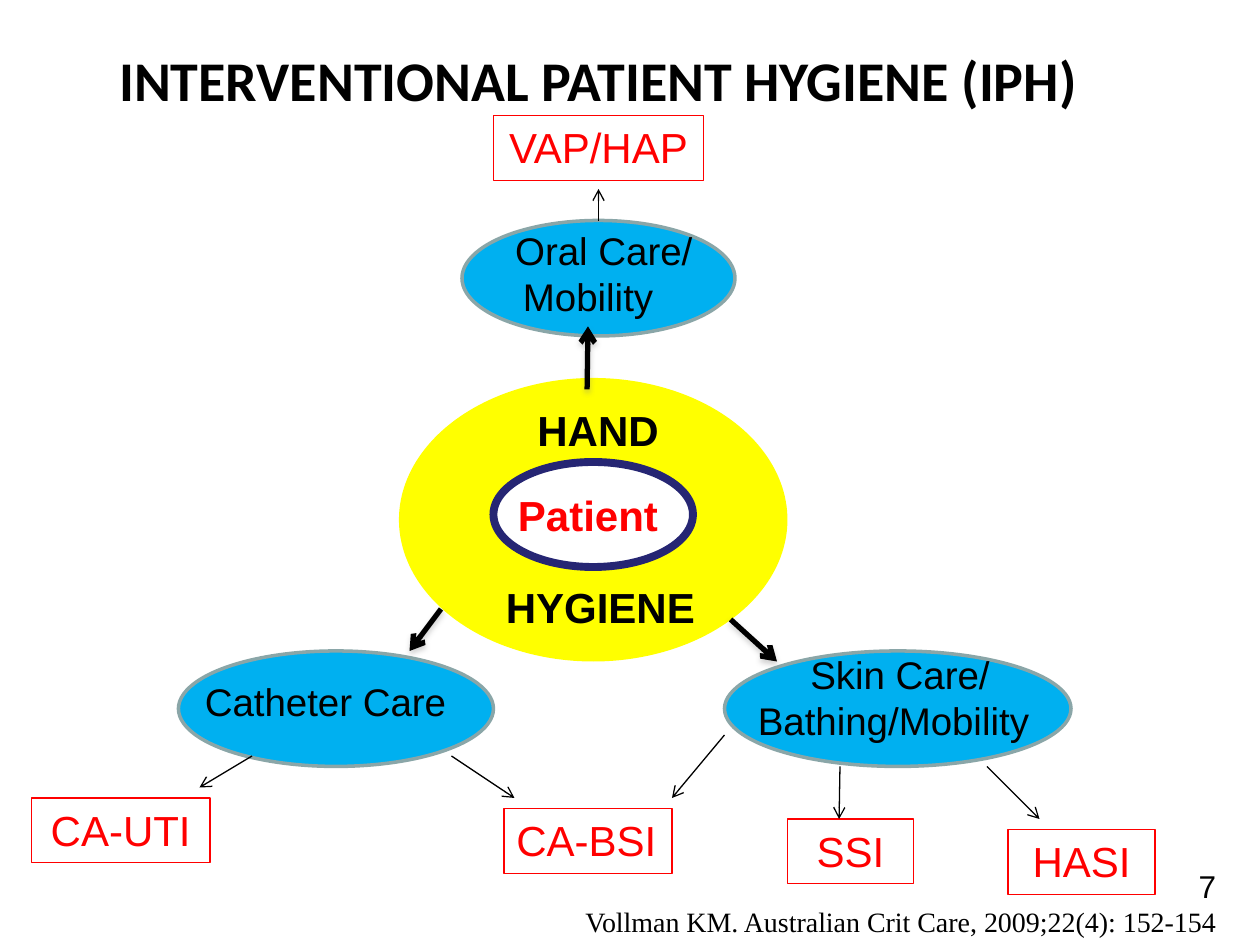
from lxml import etree
from pptx import Presentation
from pptx.dml.color import RGBColor
from pptx.enum.shapes import MSO_CONNECTOR, MSO_SHAPE
from pptx.enum.text import MSO_ANCHOR, PP_ALIGN
from pptx.oxml.ns import qn
from pptx.util import Pt

BLACK, RED, WHITE = "000000", "FF0000", "FFFFFF"
BLUE, YELLOW, NAVY, GREY = "00B0F0", "FFFF00", "262673", "8AA6A8"
LEFT, CENTER, RIGHT = PP_ALIGN.LEFT, PP_ALIGN.CENTER, PP_ALIGN.RIGHT


def rgb(color):
    return RGBColor.from_string(color)


def add_oval(s, box, fill, line=None, width=2):
    sp = s.shapes.add_shape(MSO_SHAPE.OVAL, *map(Pt, box))
    sp.shadow.inherit = False
    sp.fill.solid()
    sp.fill.fore_color.rgb = rgb(fill)
    if line:
        sp.line.color.rgb = rgb(line)
        sp.line.width = Pt(width)
    else:
        sp.line.fill.background()


def add_label(s, box, text, size=22, color=BLACK, bold=False, align=CENTER,
              font="Arial", indent=0, wrap=True):
    """Add a text box; indent moves its first line only."""
    sp = s.shapes.add_textbox(*map(Pt, box))
    tf = sp.text_frame
    tf.word_wrap = wrap
    p = tf.paragraphs[0]
    p.text = text
    p.alignment = align
    if indent:
        pPr = p._p.get_or_add_pPr()
        pPr.set("marL", "0")
        pPr.set("indent", str(Pt(indent)))
    p.font.name = font
    p.font.size = Pt(size)
    p.font.bold = bold
    p.font.color.rgb = rgb(color)
    return sp


def add_infection(s, box, text, fill=WHITE, align=CENTER):
    """Add a red-framed label naming an infection."""
    sp = add_label(s, box, text, 24, RED, align=align)
    if fill:
        sp.fill.solid()
        sp.fill.fore_color.rgb = rgb(fill)
    sp.line.color.rgb = rgb(RED)
    sp.line.width = Pt(0.75)


def add_arrow(s, start, end, width=0.75, shadow=False):
    c = s.shapes.add_connector(MSO_CONNECTOR.STRAIGHT, *map(Pt, start + end))
    c.line.color.rgb = rgb(BLACK)
    c.line.width = Pt(width)
    etree.SubElement(c.line._get_or_add_ln(), qn("a:tailEnd"), type="arrow")
    effects = etree.SubElement(c._element.spPr, qn("a:effectLst"))
    if shadow:
        outer = etree.SubElement(effects, qn("a:outerShdw"), blurRad=str(Pt(3.1)),
                                 dist=str(Pt(1.8)), dir="5400000", rotWithShape="0")
        color = etree.SubElement(outer, qn("a:srgbClr"), val="808080")
        etree.SubElement(color, qn("a:alpha"), val="35000")


def main():
    prs = Presentation()
    prs.slide_width, prs.slide_height = Pt(720), Pt(540)
    s = prs.slides.add_slide(prs.slide_layouts[6])

    title = add_label(s, (0, 0, 684, 90), "INTERVENTIONAL PATIENT HYGIENE (IPH)",
                      32, bold=True, font="Calibri")
    title.text_frame.vertical_anchor = MSO_ANCHOR.MIDDLE

    for left, top, width in ((264, 126, 156), (102, 372, 180), (414, 372, 198)):
        add_oval(s, (left, top, width, 66), BLUE, GREY)
    add_oval(s, (228, 216, 222, 162), YELLOW)
    add_oval(s, (282, 264, 114, 60), WHITE, NAVY, 4.5)

    add_label(s, (252, 126, 168, 63), "Oral Care/ Mobility", indent=18)
    add_label(s, (102, 384, 168, 34), "Catheter Care")
    add_label(s, (426, 368.5, 216, 63), "Skin Care/ Bathing/Mobility",
              align=LEFT, indent=30)
    add_label(s, (288, 227.5, 96, 37), "HAND", 24, bold=True, align=LEFT, indent=12)
    add_label(s, (264, 276, 144, 37), "Patient", 24, RED, bold=True)
    add_label(s, (282, 329, 132, 37), "HYGIENE", 24, bold=True, align=LEFT)

    add_infection(s, (282, 66, 120, 37), "VAP/HAP", fill=None)
    add_infection(s, (18, 456, 102, 37), "CA-UTI")
    add_infection(s, (288, 462, 96, 37), "CA-BSI", align=LEFT)
    add_infection(s, (450, 468, 72, 37), "SSI")
    add_infection(s, (576, 474, 84, 37), "HASI")

    hygiene_to_care = (
        ((335.5, 222.5), (336, 186.5)),
        ((252, 348), (234, 372)),
        ((417.5, 354), (444, 378)),
    )
    for start, end in hygiene_to_care:
        add_arrow(s, start, end, 3, shadow=True)

    care_to_infection = (
        ((342, 126), (342, 108)),
        ((144, 432), (114, 450)),
        ((258, 432), (294, 456)),
        ((414, 420), (384, 456)),
        ((480, 438), (479.5, 468)),
        ((564, 438), (594, 468)),
    )
    for start, end in care_to_infection:
        add_arrow(s, start, end)

    add_label(s, (327.5, 513.5, 380, 26.5),
              "Vollman KM. Australian Crit Care, 2009;22(4): 152-154",
              16, align=LEFT, font="Times New Roman", wrap=False)
    add_label(s, (666, 492, 36, 37), "7", 18, align=RIGHT)

    prs.save("out.pptx")


if __name__ == "__main__":
    main()
